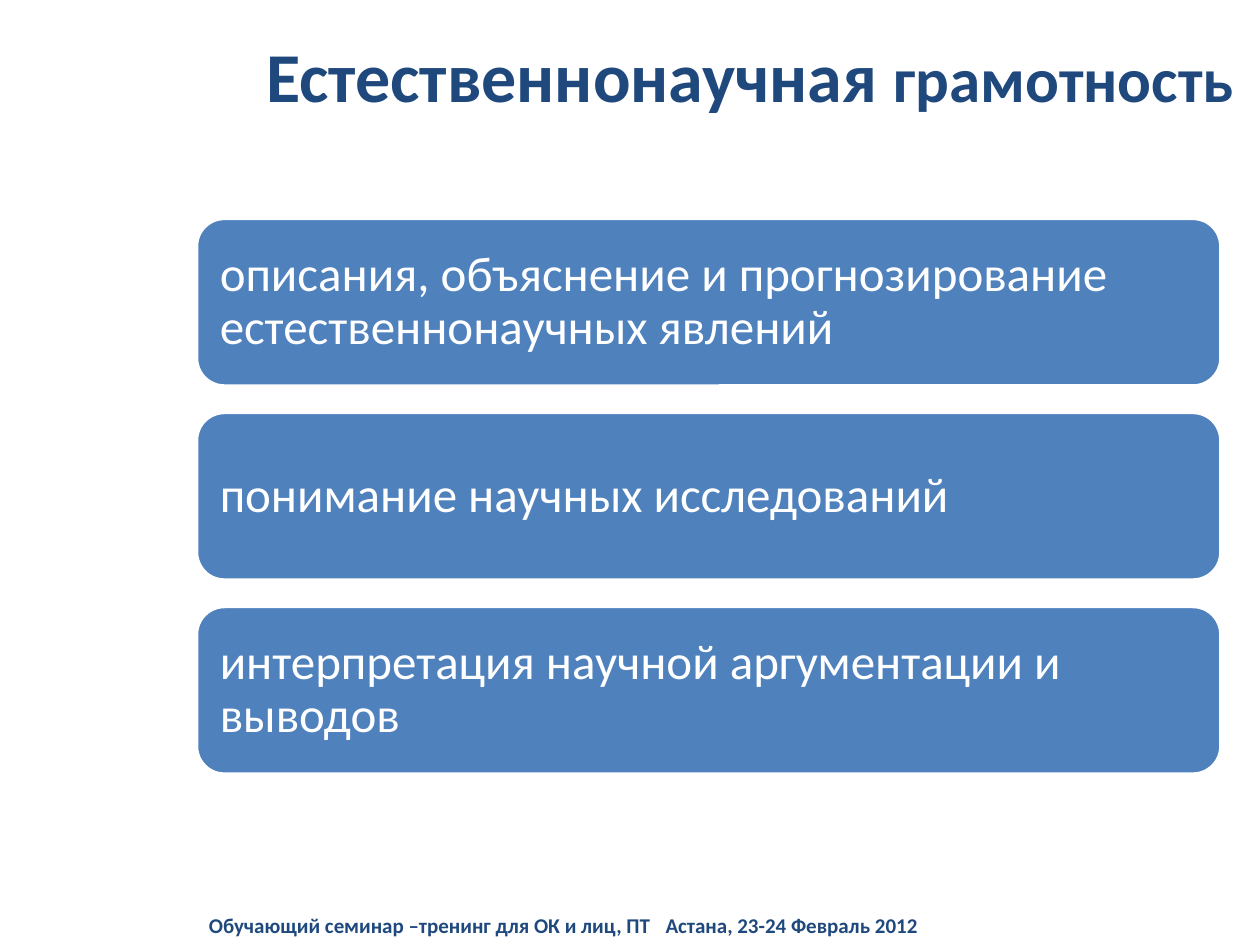
from dataclasses import dataclass

from lxml.etree import SubElement
from pptx import Presentation
from pptx.dml.color import RGBColor as Rgb
from pptx.enum.shapes import MSO_SHAPE as Kind
from pptx.enum.text import MSO_ANCHOR as Anchor, PP_ALIGN as Align
from pptx.oxml.ns import qn
from pptx.util import Pt

COLORS = {"navy": "1F497D", "blue": "4F81BD", "white": "FFFFFF"}
FONT = "Calibri"


@dataclass
class Box:
    left: float
    top: float
    width: float
    height: float

    def place(self) -> tuple:
        return Pt(self.left), Pt(self.top), Pt(self.width), Pt(self.height)


def color(name: str) -> Rgb:
    return Rgb.from_string(COLORS[name])


def write(shape, runs: list, *, ink: str = "navy", bold: bool = False,
          align=Align.LEFT, pad: tuple = (7.2, 3.6, 7.2, 3.6),
          space: float = 1, tab: float = 0) -> None:
    """Fill a shape with one paragraph of (text, size) runs; pad is left, top, right, bottom."""
    frame = shape.text_frame
    frame.word_wrap = True
    frame.vertical_anchor = Anchor.MIDDLE
    frame.margin_left, frame.margin_top, frame.margin_right, frame.margin_bottom = map(Pt, pad)
    para = frame.paragraphs[0]
    para.alignment = align
    para.line_spacing = space
    if tab:
        stops = SubElement(para._p.get_or_add_pPr(), qn("a:tabLst"))
        SubElement(stops, qn("a:tab"), pos=str(Pt(tab)), algn="l")
    for text, size in runs:
        run = para.add_run()
        run.text = text
        font = run.font
        font.name, font.size, font.bold = FONT, Pt(size), bold
        font.color.rgb = color(ink)


def label(slide, box: Box, runs: list, **form) -> None:
    write(slide.shapes.add_textbox(*box.place()), runs, **form)


def card(slide, box: Box, text: str) -> None:
    shape = slide.shapes.add_shape(Kind.ROUNDED_RECTANGLE, *box.place())
    shape.shadow.inherit = False
    shape.fill.solid()
    shape.fill.fore_color.rgb = color("blue")
    shape.line.color.rgb = color("white")
    shape.line.width = Pt(2)
    write(shape, [(text, 28)], ink="white", pad=(8.64,) * 4, space=0.9)


SKILLS = [
    "описания, объяснение и прогнозирование естественнонаучных явлений",
    "понимание научных исследований",
    "интерпретация научной аргументации и выводов",
]
LEFT, TOP, PITCH = 112.3, 124.8, 110.9


def main() -> None:
    deck = Presentation()
    deck.slide_width, deck.slide_height = Pt(720), Pt(540)
    slide = deck.slides.add_slide(deck.slide_layouts[6])

    label(slide, Box(106.6, 0, 613.4, 85),
          [("Естественнонаучная ", 40), ("грамотность", 36)],
          bold=True, align=Align.CENTER, pad=(38, 3.6, 7.2, 3.6))
    for i, skill in enumerate(SKILLS):
        card(slide, Box(LEFT, TOP + i * PITCH, 585.4, 95.8), skill)
    label(slide, Box(LEFT, 517, 478, 23),
          [("Обучающий семинар –тренинг для ОК и лиц, ПТ\tАстана, 23-24 Февраль 2012", 12)],
          bold=True, tab=261)

    deck.save("out.pptx")


if __name__ == "__main__":
    main()
